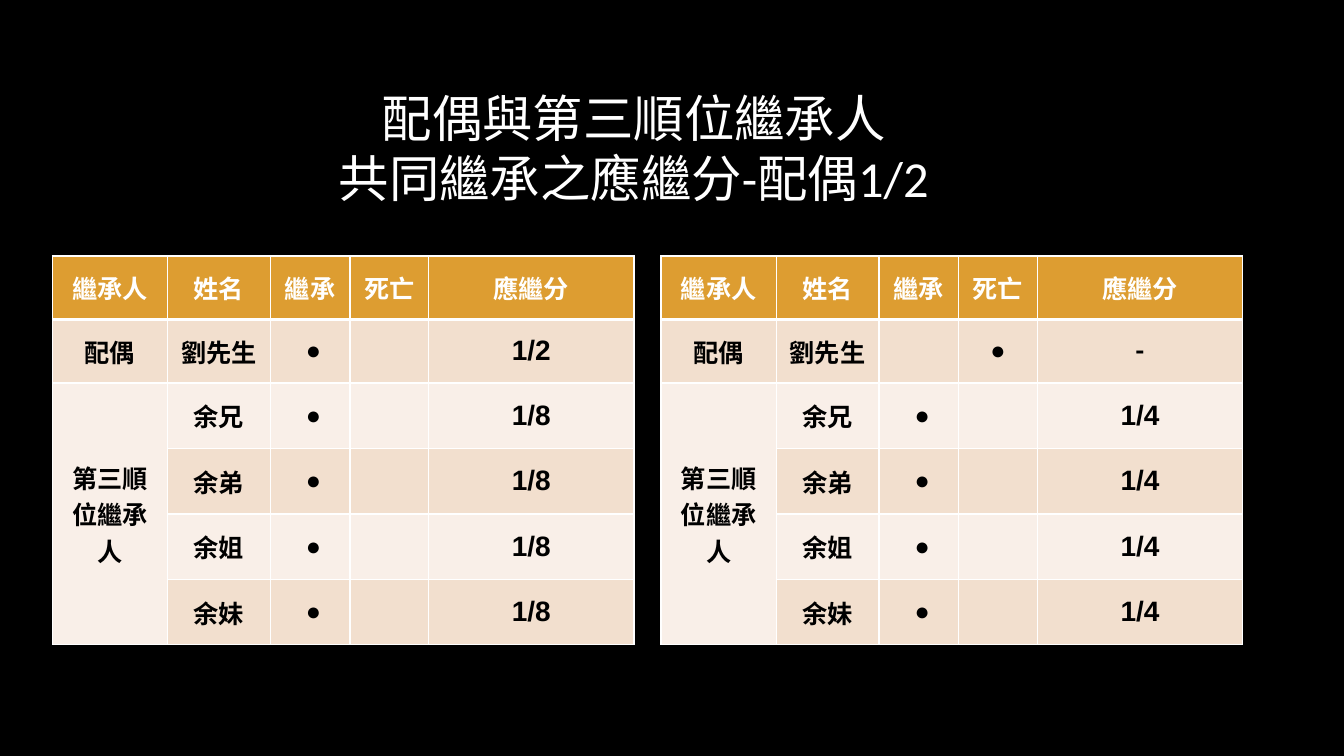
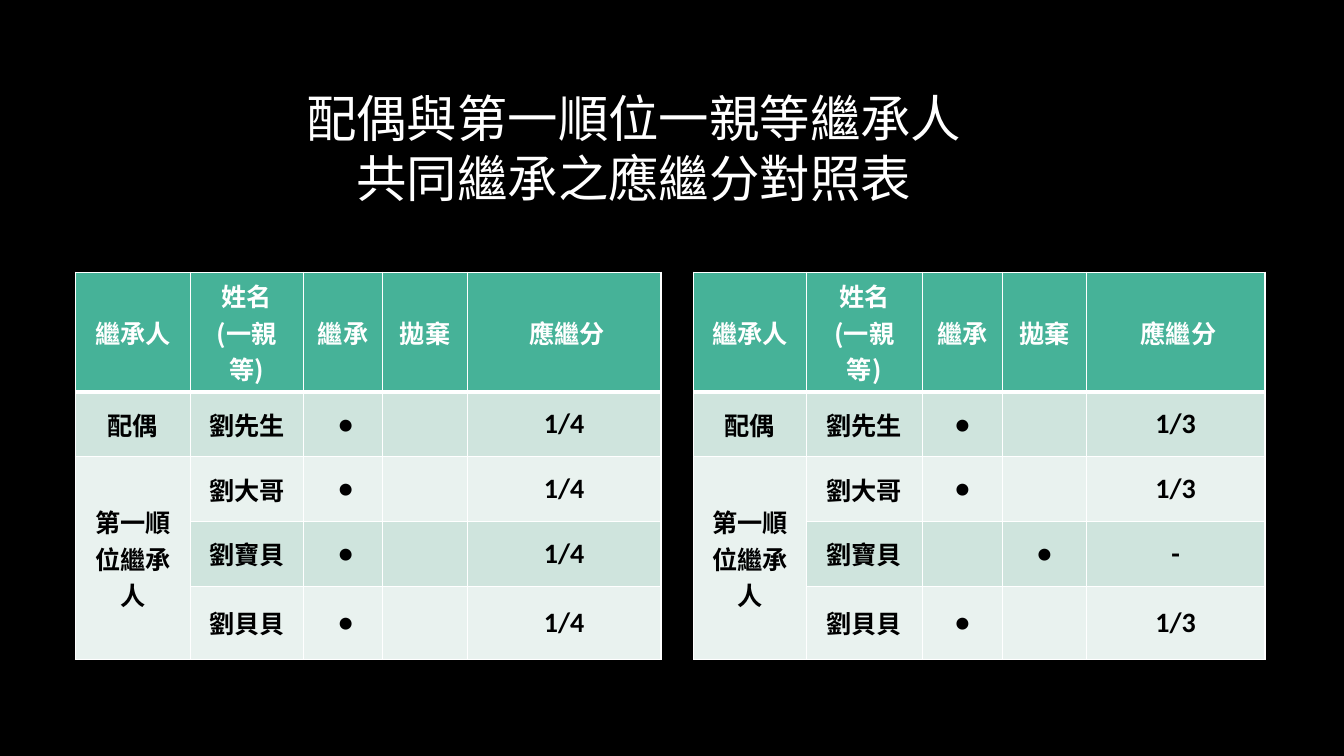
from lxml.etree import SubElement
from pptx import Presentation
from pptx.dml.color import RGBColor
from pptx.enum.text import MSO_ANCHOR, PP_ALIGN
from pptx.oxml.ns import qn
from pptx.util import Cm, Pt

COLOURS = {
    "background": "000000",
    "light": "FFFFFF",
    "dark": "000000",
}
ORANGE = {"header": "DD9D31", "odd": "F2DFCE", "even": "F9EFE8"}
GREEN = {"header": "46B298", "odd": "CFE4DD", "even": "E9F2EF"}

ASIAN_FONT = "Noto Sans CJK TC"
TITLE_FONT = "Calibri"
FONT_EXCEPTIONS = {"死亡": "Calibri", "-": "Calibri", "(一親等)": ASIAN_FONT}
SHARE_COLUMN = 4


class InheritanceDeck:
    """Holds the shared style and the slide being built."""

    def __init__(self):
        self.presentation = Presentation()
        self.presentation.slide_width = Cm(33.87)
        self.presentation.slide_height = Cm(19.05)
        self.slide = None

    def add_slide(self, title_lines):
        self.slide = self.presentation.slides.add_slide(self.presentation.slide_layouts[6])
        background = self.slide.background.fill
        background.solid()
        background.fore_color.rgb = RGBColor.from_string(COLOURS["background"])
        self.add_title(title_lines)

    def add_title(self, lines):
        shape = self.slide.shapes.add_textbox(Cm(1.9), Cm(1.7), Cm(28.14), Cm(4.04))
        frame = shape.text_frame
        frame.word_wrap = True
        frame.vertical_anchor = MSO_ANCHOR.MIDDLE
        paragraph = frame.paragraphs[0]
        paragraph.alignment = PP_ALIGN.CENTER
        for index, line in enumerate(lines):
            if index:
                paragraph.add_line_break()
            self.add_run(paragraph, line, 36, TITLE_FONT, COLOURS["light"])

    def add_run(self, paragraph, text, size, font_name, colour, bold=False):
        run = paragraph.add_run()
        run.text = text
        run.font.size = Pt(size)
        run.font.bold = bold
        run.font.color.rgb = RGBColor.from_string(colour)
        run.font.name = font_name
        SubElement(run.font._element, qn("a:ea"), typeface=ASIAN_FONT)

    def add_borders(self, cell, top, bottom):
        properties = cell._tc.get_or_add_tcPr()
        for side, width in (("L", 1), ("R", 1), ("T", top), ("B", bottom)):
            line = SubElement(properties, qn(f"a:ln{side}"), w=str(Pt(width)))
            fill = SubElement(line, qn("a:solidFill"))
            SubElement(fill, qn("a:srgbClr"), val=COLOURS["light"])

    def fill_cell(self, cell, text, row, column, font_name, palette):
        is_header = row == 0
        self.add_borders(cell, top=3 if row == 1 else 1, bottom=3 if is_header else 1)
        cell.fill.solid()
        band = "header" if is_header else "odd" if row % 2 else "even"
        cell.fill.fore_color.rgb = RGBColor.from_string(palette[band])
        cell.vertical_anchor = MSO_ANCHOR.MIDDLE
        cell.margin_left = cell.margin_right = Cm(0.27)
        cell.margin_top = cell.margin_bottom = Cm(0.13)
        size = 20 if column == SHARE_COLUMN and not is_header else 18
        colour = COLOURS["light" if is_header else "dark"]
        for index, line in enumerate(text.split("\n") if text else []):
            frame = cell.text_frame
            paragraph = frame.add_paragraph() if index else frame.paragraphs[0]
            paragraph.alignment = PP_ALIGN.CENTER
            line_font = FONT_EXCEPTIONS.get(line, font_name)
            self.add_run(paragraph, line, size, line_font, colour, bold=True)

    def add_share_table(self, left, top, widths, heights, headers, order,
                        names, shares, mark, font_name, palette):
        # One row per heir: a dash as share moves the dot to the excluded column
        rows = [headers]
        for index, (name, share) in enumerate(zip(names, shares)):
            excluded = share == "-"
            heir = ("配偶", order)[index] if index < 2 else ""
            rows.append([heir, name, "" if excluded else mark,
                         "●" if excluded else "", share])

        table = self.slide.shapes.add_table(
            len(rows), len(headers), Cm(left), Cm(top),
            Cm(sum(widths)), Cm(sum(heights))).table
        for column, width in zip(table.columns, widths):
            column.width = Cm(width)
        for row, height in zip(table.rows, heights):
            row.height = Cm(height)
        table.cell(2, 0).merge(table.cell(len(rows) - 1, 0))

        for row, texts in enumerate(rows):
            for column, text in enumerate(texts):
                cell = table.cell(row, column)
                if not cell.is_spanned:
                    self.fill_cell(cell, text, row, column, font_name, palette)


def main():
    deck = InheritanceDeck()

    # Spouse with third-order heirs
    deck.add_slide(["配偶與第三順位繼承人", "共同繼承之應繼分-配偶1/2"])
    for left, shares in (
        (1.32, ["1/2"] + ["1/8"] * 4),
        (16.66, ["-"] + ["1/4"] * 4),
    ):
        deck.add_share_table(
            left, 6.45, [2.9, 2.59, 2.01, 1.98, 5.18], [1.6] * 2 + [1.65] * 4,
            ["繼承人", "姓名", "繼承", "死亡", "應繼分"], "第三順位繼承人",
            ["劉先生", "余兄", "余弟", "余姐", "余妹"], shares,
            " ●", "Arial", ORANGE)

    # Spouse with first-order heirs; the header row holds three lines
    deck.add_slide(["配偶與第一順位一親等繼承人", "共同繼承之應繼分對照表"])
    for left, widths, shares, mark in (
        (1.9, [2.9, 2.84, 2.01, 2.13, 4.88], ["1/4"] * 4, " ●"),
        (17.48, [2.84, 2.92, 2.03, 2.11, 4.5], ["1/3", "1/3", "-", "1/3"], "●"),
    ):
        deck.add_share_table(
            left, 6.86, widths, [3.02] + [1.63] * 3 + [1.85],
            ["繼承人", "姓名\n(一親等)", "繼承", "拋棄", " 應繼分"], "第一順位繼承人",
            ["劉先生", "劉大哥", "劉寶貝", "劉貝貝"], shares,
            mark, "Calibri", GREEN)

    deck.presentation.save("out.pptx")


if __name__ == "__main__":
    main()
